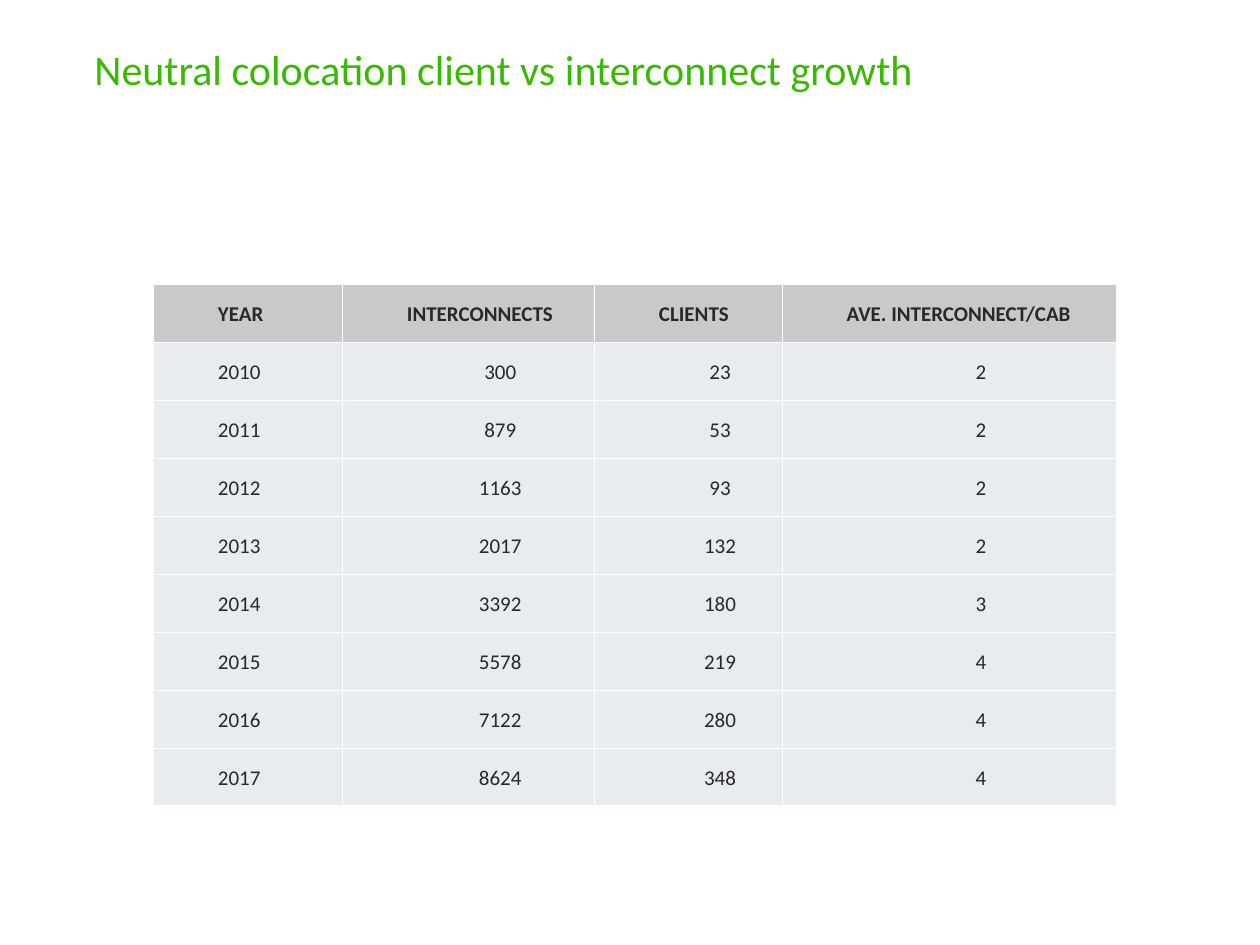
import pptx
import pptx.dml.color
import pptx.enum.text
import pptx.util
from lxml import etree
from pptx.oxml.ns import qn

Inches = pptx.util.Inches
Pt = pptx.util.Pt
RGBColor = pptx.dml.color.RGBColor
MIDDLE = pptx.enum.text.MSO_ANCHOR.MIDDLE
LEFT = pptx.enum.text.PP_ALIGN.LEFT
CENTER = pptx.enum.text.PP_ALIGN.CENTER

GREEN = RGBColor(0x38, 0xBA, 0x02)
DARK = RGBColor(0x28, 0x28, 0x28)
HEADER_GREY = RGBColor(0xC9, 0xC9, 0xC9)
BODY_GREY = RGBColor(0xE8, 0xEB, 0xF0)
WHITE = RGBColor(0xFF, 0xFF, 0xFF)

COLUMN_WIDTHS = [1.5, 2, 1.49, 2.65]
ROW_HEIGHT = 0.46
ROWS = [
    ("YEAR", "INTERCONNECTS", "CLIENTS", "AVE. INTERCONNECT/CAB"),
    (2010, 300, 23, 2),
    (2011, 879, 53, 2),
    (2012, 1163, 93, 2),
    (2013, 2017, 132, 2),
    (2014, 3392, 180, 3),
    (2015, 5578, 219, 4),
    (2016, 7122, 280, 4),
    (2017, 8624, 348, 4),
]


def write_text(para, text, size, color, bold=False):
    span = para.add_run()
    span.text = text
    values = {"name": "Calibri", "size": Pt(size), "bold": bold}
    for name, value in values.items():
        setattr(span.font, name, value)
    span.font.color.rgb = color


def add_borders(cell):
    properties = cell._tc.get_or_add_tcPr()
    for side in ("a:lnL", "a:lnR", "a:lnT", "a:lnB"):
        line = etree.SubElement(properties, qn(side), w=str(Pt(1)))
        fill = etree.SubElement(line, qn("a:solidFill"))
        etree.SubElement(fill, qn("a:srgbClr"), val=str(WHITE))


deck = pptx.Presentation()
deck.slide_width, deck.slide_height = Inches(10), Inches(7.5)
page = deck.slides.add_slide(deck.slide_layouts[6])

# Growth table
frame = page.shapes.add_table(
    len(ROWS), len(COLUMN_WIDTHS), Inches(1.22), Inches(2.26),
    Inches(sum(COLUMN_WIDTHS)), Inches(ROW_HEIGHT * len(ROWS)))
table = frame.table
table.horz_banding = False
for column, width in zip(table.columns, COLUMN_WIDTHS):
    column.width = Inches(width)

cell_format = {
    "margin_left": Inches(0.01), "margin_right": Inches(0.01),
    "margin_top": Inches(0.01), "margin_bottom": 0,
    "vertical_anchor": MIDDLE,
}
for row_index, values in enumerate(ROWS):
    table.rows[row_index].height = Inches(ROW_HEIGHT)
    is_header = row_index == 0
    for column_index, value in enumerate(values):
        cell = table.cell(row_index, column_index)
        for name, setting in cell_format.items():
            setattr(cell, name, setting)
        add_borders(cell)
        cell.fill.solid()
        cell.fill.fore_color.rgb = HEADER_GREY if is_header else BODY_GREY
        para = cell.text_frame.paragraphs[0]
        para.level = 1
        para.alignment = LEFT if is_header or column_index == 0 else CENTER
        indent = para._p.get_or_add_pPr()
        indent.set("marL", str(Inches(0.5)))
        indent.set("indent", "0")
        write_text(para, str(value), 12, DARK, bold=is_header)

# Title
box = page.shapes.add_textbox(
    Inches(0.67), Inches(0.03), Inches(7.34), Inches(1.03))
title_format = {
    "margin_left": Inches(0.08), "margin_right": 0,
    "margin_top": 0, "margin_bottom": 0,
    "vertical_anchor": MIDDLE, "word_wrap": True,
}
for name, setting in title_format.items():
    setattr(box.text_frame, name, setting)
write_text(box.text_frame.paragraphs[0],
           "Neutral colocation client vs interconnect growth", 24, GREEN)

deck.save("out.pptx")
